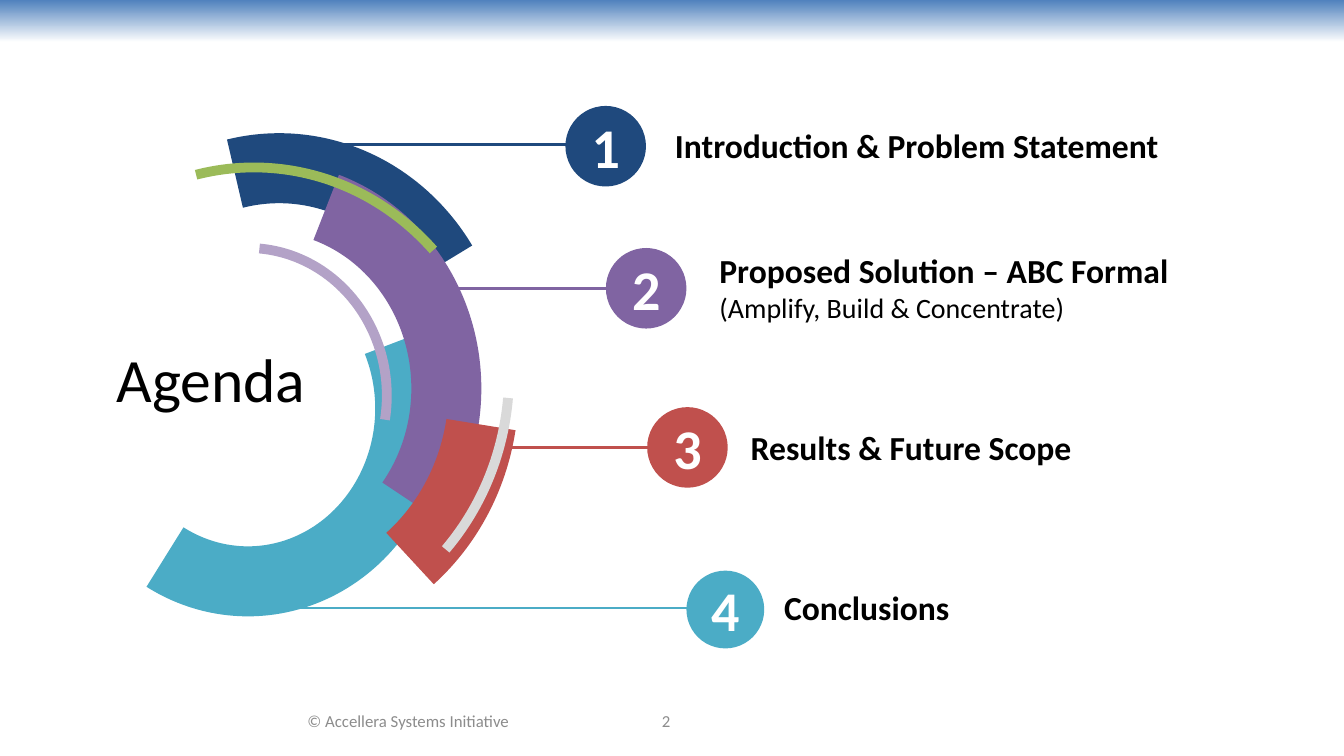
from lxml import etree
from pptx import Presentation
from pptx.dml.color import RGBColor
from pptx.enum.shapes import MSO_CONNECTOR, MSO_SHAPE
from pptx.enum.text import MSO_ANCHOR, PP_ALIGN
from pptx.oxml.ns import qn
from pptx.util import Cm, Pt

ARC, OVAL, RECT = MSO_SHAPE.ARC, MSO_SHAPE.OVAL, MSO_SHAPE.RECTANGLE
STRAIGHT = MSO_CONNECTOR.STRAIGHT
LEFT, CENTER = PP_ALIGN.LEFT, PP_ALIGN.CENTER
TOP, MIDDLE = MSO_ANCHOR.TOP, MSO_ANCHOR.MIDDLE

FONT = "Calibri"
BLACK, WHITE, GREY = "000000", "FFFFFF", "8C8C8C"
NAVY, PURPLE, RED, TEAL = "1F497D", "8064A2", "C0504D", "4BACC6"
WIDE, THIN = 50, 7  # arc line widths in points

# Box in cm, start and end in degrees clockwise from the right, colour, width
ARCS = [
    ((2.16, 5.94, 8.18, 8.71), 335.87, 119.17, TEAL, WIDE),
    ((2.16, 4.24, 9.75, 10.39), 257.6, 325.86, NAVY, WIDE),
    ((2.16, 4.95, 9.09, 9.68), 288.39, 37.94, PURPLE, WIDE),
    ((1.7, 4.22, 10.49, 11.18), 9.76, 51.53, RED, WIDE),
    ((0.2, 4.22, 12.4, 13.18), 257.19, 315.09, "9BBB59", THIN),
    ((0.43, 2.84, 12.4, 13.18), 5.55, 43.81, "D9D9D9", THIN),
    ((2.74, 6.25, 7.01, 7.44), 274.55, 9.94, "B3A2C7", THIN),
]

# Colour, disc (left, top, size), line (start, height), text box, lines of text
ITEMS = [
    (NAVY, (14.25, 2.67, 2.03), (5.82, 3.64), (16.76, 3.02, 13.16, 1.27),
     ["Introduction & Problem Statement"]),
    (PURPLE, (15.27, 6.25, 2.03), (10.82, 7.26), (17.88, 6.17, 13.16, 2.13),
     ["Proposed Solution – ABC Formal", "(Amplify, Build & Concentrate)"]),
    (RED, (16.31, 10.26, 2.03), (12.83, 11.28), (18.67, 10.64, 9.65, 1.27),
     ["Results & Future Scope"]),
    (TEAL, (17.3, 14.38, 1.96), (7.39, 15.32), (19.51, 14.66, 5.51, 1.27),
     ["Conclusions"]),
]

FOOTER = [
    ((6.2, 17.65, 8.18, 1.02), "© Accellera Systems Initiative"),
    ((13.54, 17.65, 6.5, 1.02), "2"),
]


def rgb(code):
    return RGBColor.from_string(code)


def style(para, size, color, bold=False, align=LEFT):
    para.alignment = align
    for run in para.runs:
        font = run.font
        font.name, font.size, font.bold = FONT, Pt(size), bold
        font.color.rgb = rgb(color)


def add_shape(kind, box):
    shape = slide.shapes.add_shape(kind, *map(Cm, box))
    shape.shadow.inherit = False
    return shape


def add_text(box, lines, anchor=TOP):
    frame = slide.shapes.add_textbox(*map(Cm, box)).text_frame
    frame.word_wrap = True
    frame.vertical_anchor = anchor
    frame.text = "\n".join(lines)
    return frame.paragraphs


def add_line(start, end, y, color):
    line = slide.shapes.add_connector(
        STRAIGHT, Cm(start), Cm(y), Cm(end), Cm(y))
    line.line.color.rgb = rgb(color)
    line.line.width = Pt(2)
    etree.SubElement(line._element.spPr, qn("a:effectLst"))


deck = Presentation()
deck.slide_width, deck.slide_height = Cm(33.87), Cm(19.05)
slide = deck.slides.add_slide(deck.slide_layouts[5])

# Title
title = slide.shapes.title
title.left, title.top, title.width, title.height = map(
    Cm, (1.09, 8.46, 8.46, 2.13))
title.text_frame.text = "Agenda"
title.text_frame.vertical_anchor = MIDDLE
style(title.text_frame.paragraphs[0], 44, BLACK, align=CENTER)

# Top band
band = add_shape(RECT, (0, 0, 33.87, 1.07))
band.line.fill.background()
band.fill.gradient()
band.fill.gradient_angle = 270
for stop, color in zip(band.fill.gradient_stops, ("4F81BD", WHITE)):
    stop.color.rgb = rgb(color)

# Footer
for box, text in FOOTER:
    style(add_text(box, [text], MIDDLE)[0], 12, GREY, align=CENTER)

# Arcs: an adjustment of 0.6 is one degree
for box, start, end, color, width in ARCS:
    arc = add_shape(ARC, box)
    arc.adjustments[0], arc.adjustments[1] = start * 0.6, end * 0.6
    arc.fill.background()
    arc.line.color.rgb = rgb(color)
    arc.line.width = Pt(width)

# Agenda items
for num, (color, (x, y, size), (start, level), box, lines) in enumerate(ITEMS, 1):
    add_line(start, x + 0.3, level, color)

    disc = add_shape(OVAL, (x, y, size, size))
    disc.fill.solid()
    disc.fill.fore_color.rgb = rgb(color)
    disc.line.fill.background()
    frame = disc.text_frame
    frame.text = str(num)
    frame.vertical_anchor = MIDDLE
    style(frame.paragraphs[0], 40, WHITE, True, CENTER)

    head, *rest = add_text(box, lines)
    style(head, 24, BLACK, True)
    for para in rest:
        style(para, 20, BLACK)

deck.save("out.pptx")
